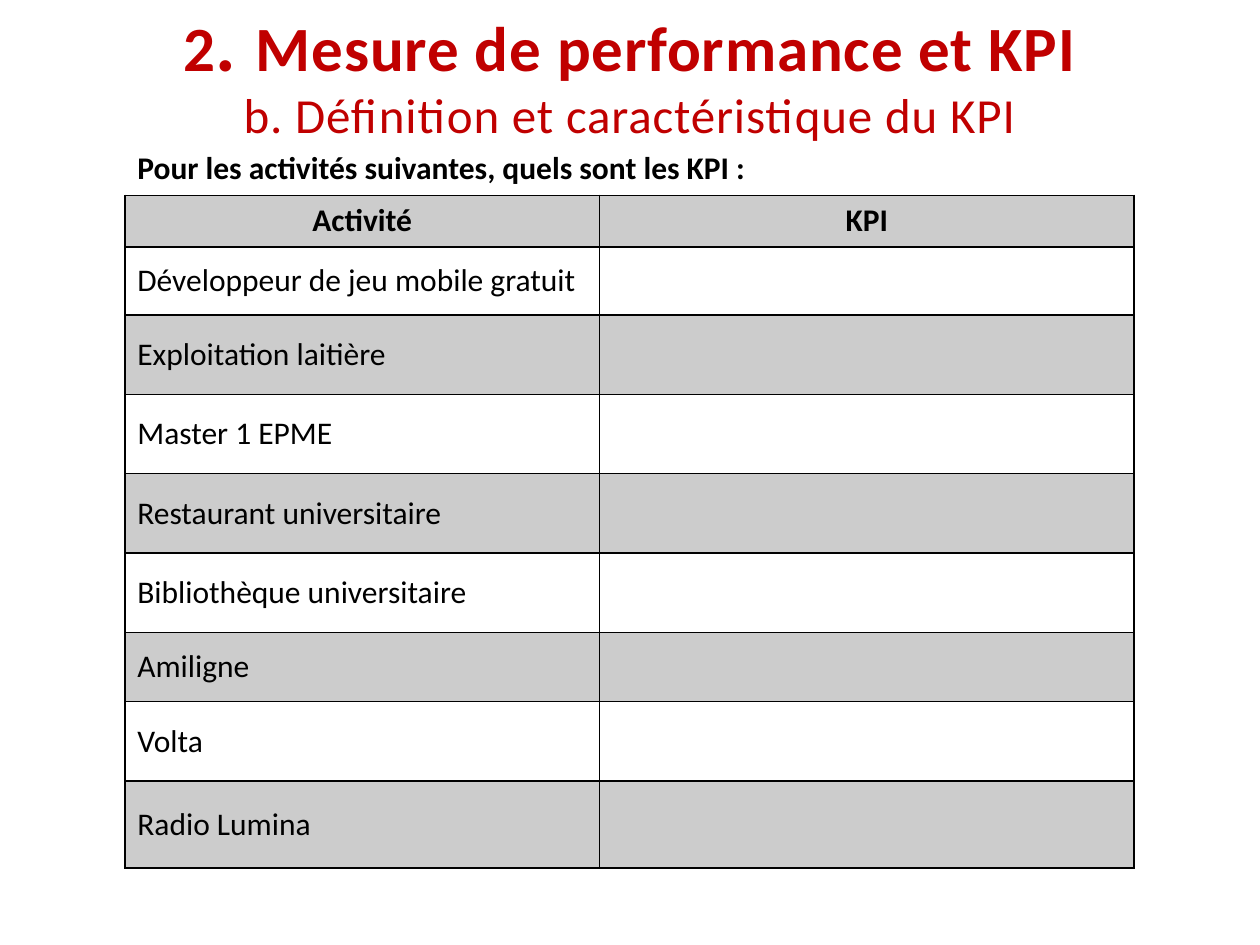
from lxml import etree
from pptx import Presentation
from pptx.dml.color import RGBColor
from pptx.enum.text import MSO_ANCHOR, PP_ALIGN
from pptx.oxml.ns import qn
from pptx.util import Inches, Pt

TOP, MIDDLE = MSO_ANCHOR.TOP, MSO_ANCHOR.MIDDLE
LEFT, CENTER = PP_ALIGN.LEFT, PP_ALIGN.CENTER
RED, BLACK = "C00000", "000000"

TITLE = [
    [("2", 36, True), (". ", 44, True), ("Mesure de performance et KPI", 36, True)],
    [("b. Définition et caractéristique du KPI", 28, False)],
]
QUESTION = "Pour les activités suivantes, quels sont les KPI :"
HEADERS = ["Activité", "KPI"]
ACTIVITIES = [
    ("Développeur de jeu mobile gratuit", 0.54),
    ("Exploitation laitière", 0.63),
    ("Master 1 EPME", 0.63),
    ("Restaurant universitaire", 0.63),
    ("Bibliothèque universitaire", 0.63),
    ("Amiligne", 0.55),
    ("Volta", 0.63),
    ("Radio Lumina", 0.69),
]
COL_WIDTHS = [3.77, 4.24]
ROW_HEIGHTS = [0.41, 0.41] + [height for _, height in ACTIVITIES]


def add_text(p, text, size=18, color=BLACK, bold=False, align=LEFT, spacing=None):
    p.alignment = align
    r = p.add_run()
    r.text = text
    r.font.name = "Calibri"
    r.font.size = Pt(size)
    r.font.bold = bold
    r.font.color.rgb = RGBColor.from_string(color)
    if spacing:
        r._r.get_or_add_rPr().set("spc", str(int(spacing * 100)))


def set_borders(cell, visible):
    tcPr = cell._tc.get_or_add_tcPr()
    for side in ("L", "R", "T", "B"):
        ln = etree.SubElement(tcPr, qn(f"a:ln{side}"), w=str(Pt(1)))
        if side in visible:
            fill = etree.SubElement(ln, qn("a:solidFill"))
            etree.SubElement(fill, qn("a:srgbClr"), val=BLACK)
        else:
            etree.SubElement(ln, qn("a:noFill"))


def set_fill(cell, shaded):
    if not shaded:
        cell.fill.background()
        return
    cell.fill.solid()
    cell.fill.fore_color.rgb = RGBColor.from_string(BLACK)
    color = cell._tc.tcPr.find(qn("a:solidFill")).find(qn("a:srgbClr"))
    etree.SubElement(color, qn("a:alpha"), val="20000")


def add_title(s):
    title = s.shapes.title
    title.left, title.top = Inches(0.5), Inches(-0.11)
    title.width, title.height = Inches(9), Inches(1.25)
    tf = title.text_frame
    tf.word_wrap = True
    tf.vertical_anchor = TOP
    tf.margin_top = Inches(0.12)
    for i, runs in enumerate(TITLE):
        p = tf.add_paragraph() if i else tf.paragraphs[0]
        p.line_spacing = 0.95
        p.space_before = Pt(0)
        for text, size, bold in runs:
            add_text(p, text, size=size, color=RED, bold=bold, align=CENTER, spacing=0.5)


def add_kpi_table(s):
    rows = [[QUESTION, ""], HEADERS] + [[name, ""] for name, _ in ACTIVITIES]
    table = s.shapes.add_table(
        len(rows), len(COL_WIDTHS), Inches(0.99), Inches(1.14),
        Inches(sum(COL_WIDTHS)), Inches(sum(ROW_HEIGHTS)),
    ).table
    table.first_row = table.horz_banding = False
    for column, width in zip(table.columns, COL_WIDTHS):
        column.width = Inches(width)
    for i, (row, height) in enumerate(zip(rows, ROW_HEIGHTS)):
        table.rows[i].height = Inches(height)
        for j, text in enumerate(row):
            cell = table.cell(i, j)
            set_borders(cell, "LRTB" if i else "B")
            set_fill(cell, i % 2 == 1)
            cell.vertical_anchor = MIDDLE if i else TOP
            if text:
                add_text(cell.text_frame.paragraphs[0], text, bold=i < 2,
                         align=CENTER if i == 1 else LEFT)
    table.cell(0, 0).merge(table.cell(0, 1))


def main():
    prs = Presentation()
    prs.slide_width, prs.slide_height = Inches(10), Inches(7.5)
    s = prs.slides.add_slide(prs.slide_layouts[5])
    add_title(s)
    add_kpi_table(s)
    prs.save("out.pptx")


if __name__ == "__main__":
    main()
